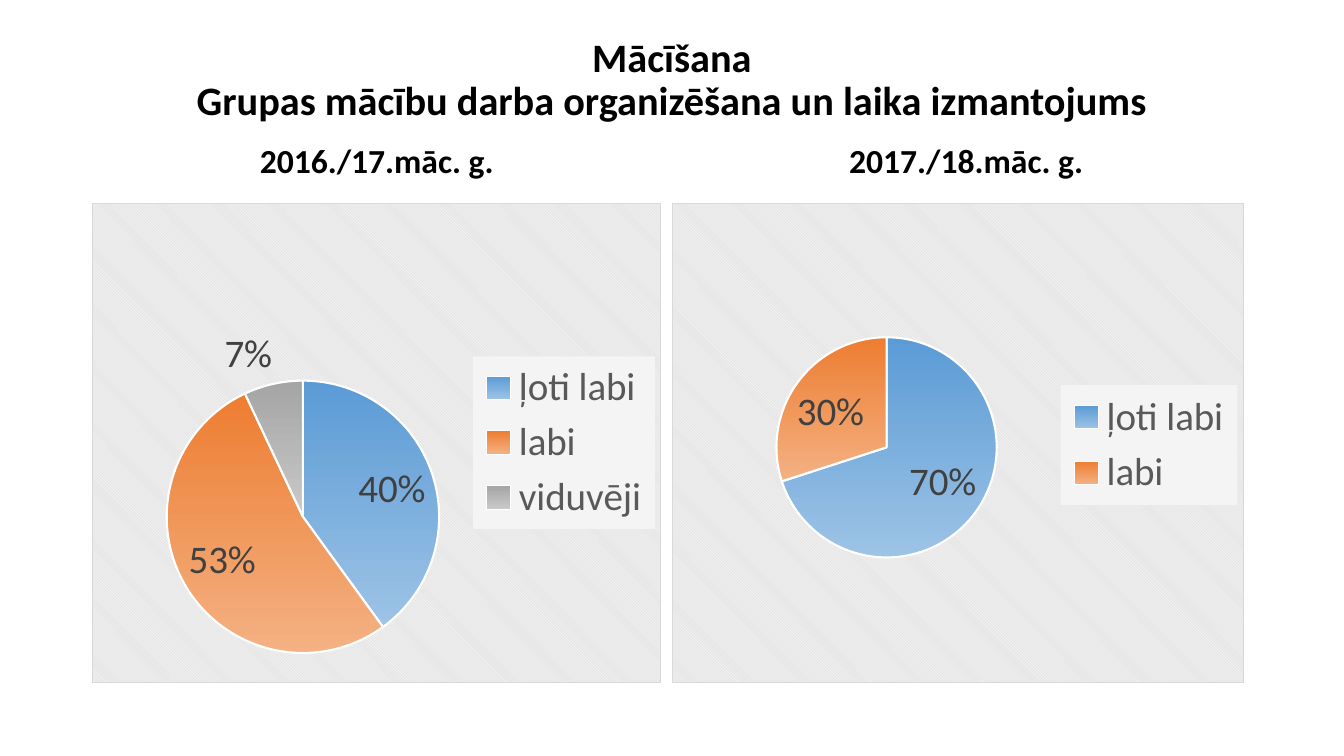
from lxml.etree import SubElement
from pptx import Presentation
from pptx.chart.data import CategoryChartData
from pptx.dml.color import RGBColor
from pptx.enum.chart import XL_CHART_TYPE, XL_LABEL_POSITION, XL_LEGEND_POSITION
from pptx.enum.text import MSO_ANCHOR, PP_ALIGN
from pptx.oxml import parse_xml
from pptx.oxml.ns import nsdecls, qn
from pptx.util import Cm, Pt

FONT = "Calibri"
GRADIENTS = [("5B9BD5", "9DC3E6"), ("ED7D31", "F4B183"), ("A5A5A5", "C9C9C9")]
AREA_STYLE = (
    '<a:pattFill prst="dkDnDiag"><a:fgClr><a:srgbClr val="FFFFFF"/></a:fgClr>'
    '<a:bgClr><a:srgbClr val="E6E6E6"/></a:bgClr></a:pattFill>'
    '<a:ln w="9525"><a:solidFill><a:srgbClr val="D9D9D9"/></a:solidFill></a:ln>'
)
LEGEND_STYLE = '<a:solidFill><a:srgbClr val="F4F4F4"/></a:solidFill><a:ln><a:noFill/></a:ln>'


def rgb(value):
    """Turn a hex string into a colour."""
    return RGBColor.from_string(value)


def style_font(font, size, color, bold=False):
    """Set face, size, colour and weight of a font."""
    font.name, font.size, font.bold = FONT, Pt(size), bold
    font.color.rgb = rgb(color)


def add_heading(s, box, lines, size, anchor):
    """Add a bold centred heading with one run per line."""
    tf = s.shapes.add_textbox(*map(Cm, box)).text_frame
    tf.word_wrap = True
    tf.vertical_anchor = anchor
    p = tf.paragraphs[0]
    p.alignment = PP_ALIGN.CENTER
    p.line_spacing = 0.9
    for i, line in enumerate(lines):
        if i:
            p.add_line_break()
        r = p.add_run()
        r.text = line
        style_font(r.font, size, "000000", True)


def shape_properties(content):
    """Build a chart spPr element around the given drawing XML."""
    return parse_xml(f'<c:spPr {nsdecls("c", "a")}>{content}</c:spPr>')


def set_layout(element, index, frame, inner=False):
    """Fix the place of a chart part as fractions of the chart."""
    for old in element.findall(qn("c:layout")):
        element.remove(old)
    layout = parse_xml(f'<c:layout {nsdecls("c")}><c:manualLayout/></c:layout>')
    values = [("layoutTarget", "inner")] if inner else []
    values += [("xMode", "edge"), ("yMode", "edge"), *zip("xywh", frame)]
    for tag, value in values:
        SubElement(layout[0], qn(f"c:{tag}")).set("val", str(value))
    element.insert(index, layout)


def add_pie(s, box, shares, pie_frame, legend_frame):
    """Add a pie chart with gradient slices, labels and a legend."""
    data = CategoryChartData(number_format="0%")
    data.categories = list(shares)
    data.add_series("Series 1", list(shares.values()))
    chart = s.shapes.add_chart(XL_CHART_TYPE.PIE, *map(Cm, box), data).chart
    chart.has_title = False
    style_font(chart.font, 28, "000000")
    chart.has_legend = True
    chart.legend.position = XL_LEGEND_POSITION.RIGHT
    chart.legend.include_in_layout = False
    style_font(chart.legend.font, 28, "595959")

    plot = chart.plots[0]
    plot.vary_by_categories = True
    for i, colors in zip(range(len(shares)), GRADIENTS):
        fmt = plot.series[0].points[i].format
        fmt.fill.gradient()
        fmt.fill.gradient_angle = 270
        for stop, color, place in zip(fmt.fill.gradient_stops, colors, (0, 1)):
            stop.color.rgb = rgb(color)
            stop.position = place
        fmt.line.color.rgb = rgb("FFFFFF")
        fmt.line.width = Pt(1.5)

    plot.has_data_labels = True
    labels = plot.data_labels
    labels.show_value = True
    labels.show_percentage = False
    labels.number_format = "0%"
    labels.number_format_is_linked = False
    labels.position = XL_LABEL_POSITION.BEST_FIT
    style_font(labels.font, 28, "404040")

    root = chart.element
    legend = root.xpath("c:chart/c:legend")[0]
    set_layout(root.xpath("c:chart/c:plotArea")[0], 0, pie_frame, True)
    set_layout(legend, 1, legend_frame)
    legend.find(qn("c:txPr")).addprevious(shape_properties(LEGEND_STYLE))
    root.find(qn("c:chart")).addnext(shape_properties(AREA_STYLE))


def main():
    """Build the slide and save it."""
    prs = Presentation()
    prs.slide_width, prs.slide_height = Cm(33.87), Cm(19.05)
    s = prs.slides.add_slide(prs.slide_layouts[6])
    title = ["Mācīšana", "Grupas mācību darba organizēšana un laika izmantojums"]
    add_heading(s, (2.33, 1.02, 29.21, 2.03), title, 28.8, MSO_ANCHOR.MIDDLE)
    years = [
        ("2016./17.māc. g.", 2.33, 2.33, 14.33,
         {"ļoti labi": 0.4, "labi": 0.53, "viduvēji": 0.07},
         (0.13, 0.37, 0.48, 0.57), (0.67, 0.32, 0.32, 0.36)),
        ("2017./18.māc. g.", 17.15, 16.94, 14.4,
         {"ļoti labi": 0.7, "labi": 0.3},
         (0.18, 0.28, 0.39, 0.46), (0.68, 0.38, 0.31, 0.25)),
    ]
    for year, text_left, chart_left, width, shares, pie, legend in years:
        add_heading(s, (text_left, 3.05, width, 1.62), [year], 24, MSO_ANCHOR.BOTTOM)
        add_pie(s, (chart_left, 5.11, width, 12.09), shares, pie, legend)
    prs.save("out.pptx")


if __name__ == "__main__":
    main()
